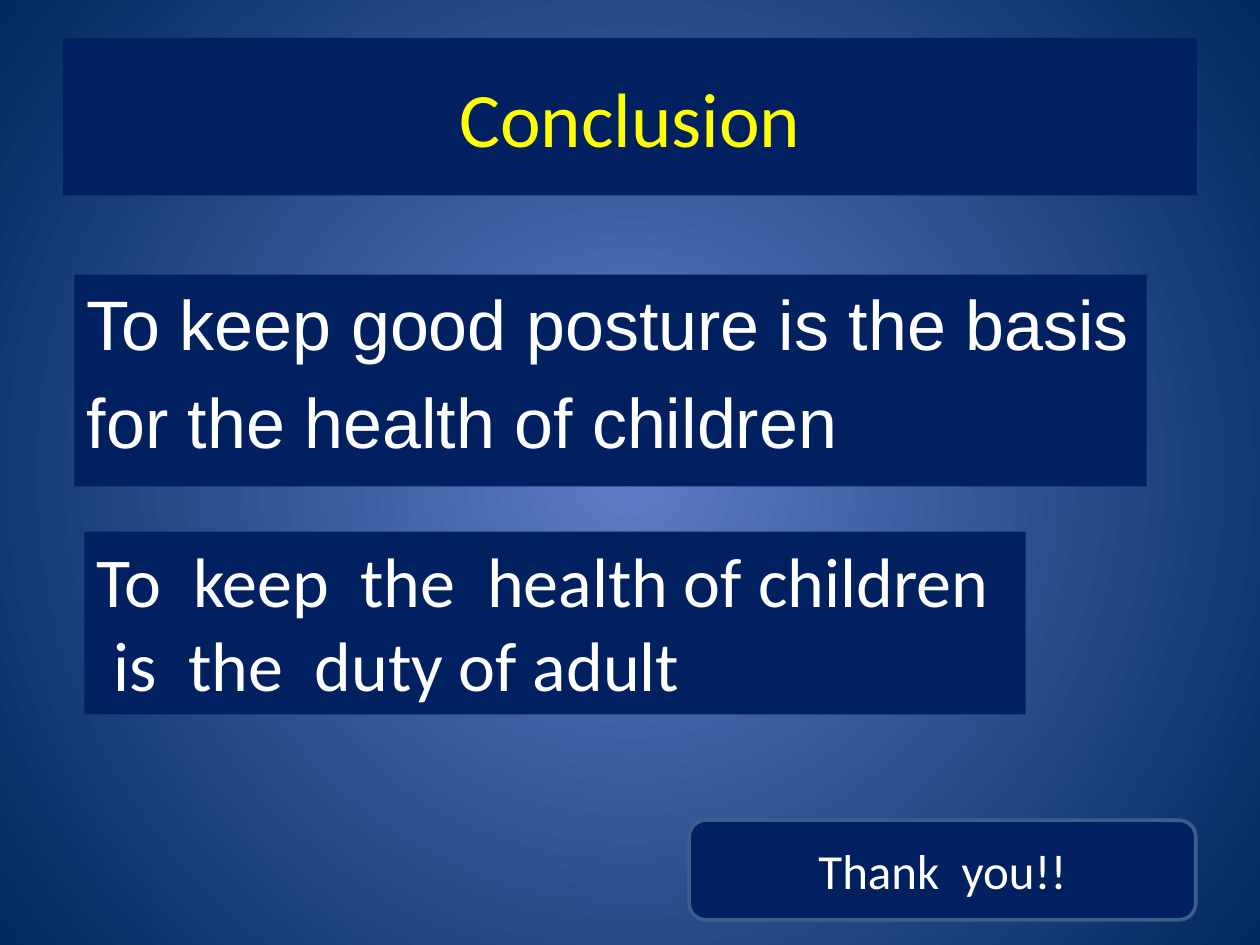
from lxml.etree import SubElement
from pptx import Presentation
from pptx.dml.color import RGBColor as Rgb
from pptx.enum.shapes import MSO_SHAPE as Shape
from pptx.enum.text import MSO_ANCHOR as Anchor, PP_ALIGN as Align
from pptx.oxml.ns import qn
from pptx.util import Inches, Pt

# The slide is a grid of 10 columns by 7.5 rows
COLUMNS, ROWS = 10, 7.5
SLIDE_WIDTH, SLIDE_HEIGHT = Inches(10), Inches(7.5)

COLORS = {
    "glow": "5E7CC5",
    "edge": "00295C",
    "panel": "002060",
    "border": "3A5F8C",
    "title": "FFFF00",
    "text": "FFFFFF",
}


def color(name):
    return Rgb.from_string(COLORS[name])


def across(columns):
    return round(SLIDE_WIDTH * columns / COLUMNS)


def down(rows):
    return round(SLIDE_HEIGHT * rows / ROWS)


def paint_background(page):
    """Radial gradient that spreads from the middle of the page."""
    fill = page.background.fill
    fill.gradient()
    for stop, name, position in zip(fill.gradient_stops, ("glow", "edge"), (0, 1)):
        stop.color.rgb = color(name)
        stop.position = position
    gradient = next(page.element.iter(qn("a:gradFill")))
    gradient.remove(gradient.find(qn("a:lin")))
    circle = SubElement(gradient, qn("a:path"), path="circle")
    SubElement(circle, qn("a:fillToRect"), dict.fromkeys("ltrb", "50000"))


def add_panel(page, left, top, width, height, kind=Shape.RECTANGLE, border=None):
    """Dark box, placed in columns and rows, with an optional border colour."""
    box = page.shapes.add_shape(kind, across(left), down(top),
                                across(width), down(height))
    box.shadow.inherit = False
    box.fill.solid()
    box.fill.fore_color.rgb = color("panel")
    if border:
        box.line.color.rgb = color(border)
        box.line.width = Pt(2)
    else:
        box.line.fill.background()
    return box


def add_span(para, text, size, font, ink):
    span = para.add_run()
    span.text = text
    span.font.size = Pt(size)
    span.font.name = font
    span.font.color.rgb = color(ink)


def add_lines(box, lines, size, font="Calibri", ink="text", centered=False,
              gap=0, indent=0, wrap=True):
    """One paragraph per line; gap and indent apply after the first line."""
    frame = box.text_frame
    frame.word_wrap = wrap
    frame.vertical_anchor = Anchor.MIDDLE if centered else Anchor.TOP
    for index, line in enumerate(lines):
        para = frame.add_paragraph() if index else frame.paragraphs[0]
        para.alignment = Align.CENTER if centered else Align.LEFT
        if index and gap:
            para.space_before = Pt(gap)
        if index and indent:
            para._p.get_or_add_pPr().set("marL", str(across(indent)))
        add_span(para, line, size, font, ink)


def main():
    deck = Presentation()
    deck.slide_width, deck.slide_height = SLIDE_WIDTH, SLIDE_HEIGHT
    page = deck.slides.add_slide(deck.slide_layouts[6])
    paint_background(page)

    # Title
    title = add_panel(page, 0.5, 0.3, 9, 1.25)
    add_lines(title, ["Conclusion"], 44, ink="title", centered=True)

    # Posture statement
    posture = add_panel(page, 0.59, 2.18, 8.51, 1.68)
    add_lines(posture, ["To keep good posture is the basis",
                        "for the health of children"], 40, font="Arial", gap=8)

    # Duty statement, its second line slightly indented
    duty = add_panel(page, 0.67, 4.22, 7.47, 1.45)
    add_lines(duty, ["To  keep  the  health of children",
                     "is  the  duty of adult"], 40, indent=0.13, wrap=False)

    # Closing words
    closing = add_panel(page, 5.47, 6.51, 4.02, 0.79,
                        kind=Shape.ROUNDED_RECTANGLE, border="border")
    add_lines(closing, ["Thank  you!!"], 28, centered=True)

    deck.save("out.pptx")


if __name__ == "__main__":
    main()
